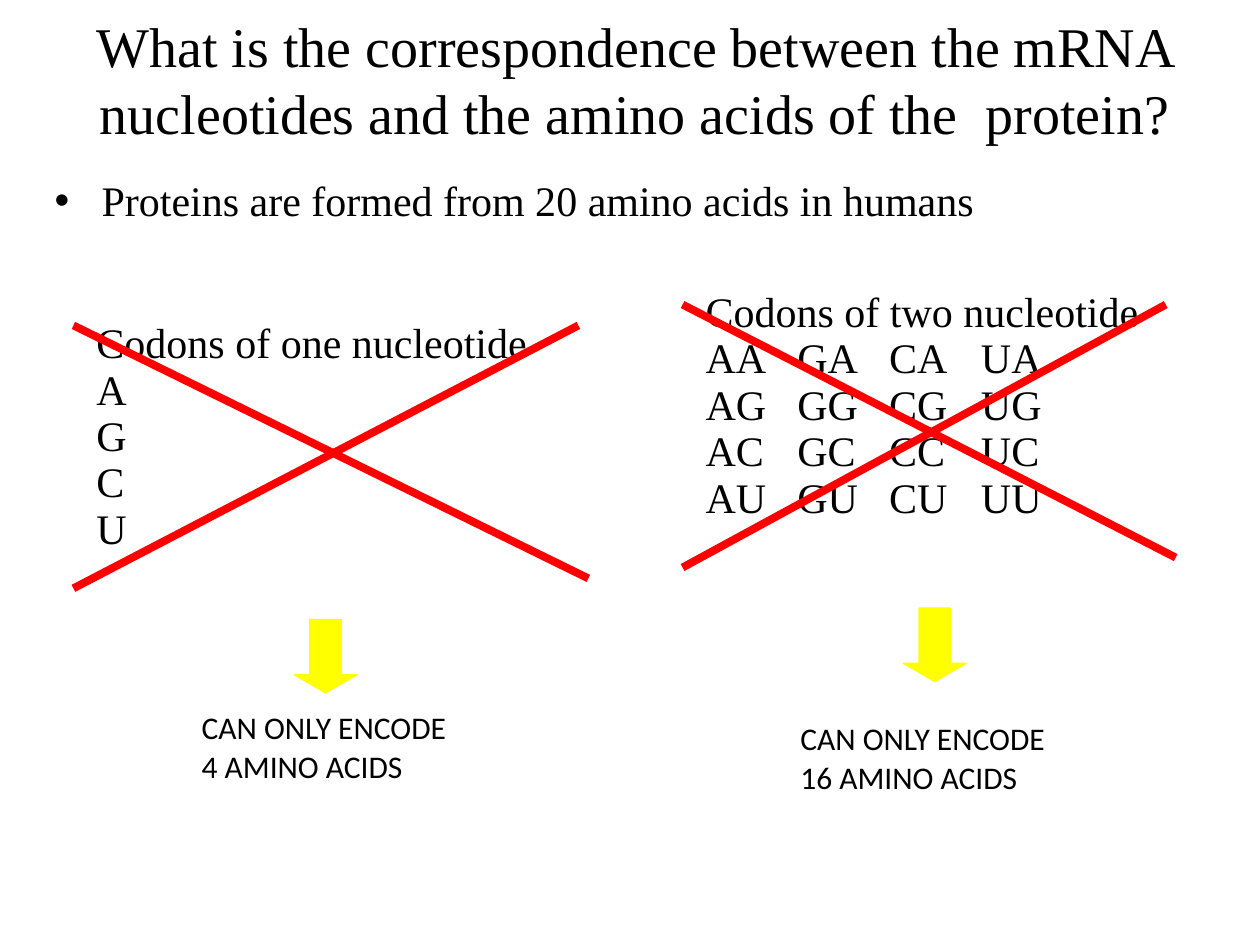
import pptx
import pptx.dml.color
import pptx.enum.shapes
import pptx.enum.text
import pptx.oxml.ns
import pptx.util
from lxml import etree

Cm = pptx.util.Cm
SERIF = "Times New Roman"


def color(value):
    return pptx.dml.color.RGBColor.from_string(value)


def add_run(p, text, size, font=SERIF):
    r = p.add_run()
    r.text = text
    r.font.size = pptx.util.Pt(size)
    r.font.name = font
    r.font.color.rgb = color("000000")


def add_child(parent, tag, **attrs):
    return etree.SubElement(parent, pptx.oxml.ns.qn(tag), **attrs)


def text_box(s, box):
    tf = s.shapes.add_textbox(*map(Cm, box)).text_frame
    tf.word_wrap = True
    return tf


def title(s, box):
    tf = text_box(s, box)
    tf.vertical_anchor = pptx.enum.text.MSO_ANCHOR.MIDDLE
    p = tf.paragraphs[0]
    p.alignment = pptx.enum.text.PP_ALIGN.CENTER
    add_run(p, "What is the correspondence between the mRNA nucleotides "
               "and the amino acids of the  protein?", 32)


def body(s, box):
    p = text_box(s, box).paragraphs[0]
    pPr = p._p.get_or_add_pPr()
    pPr.set("marL", str(Cm(0.95)))
    pPr.set("indent", str(Cm(-0.95)))
    add_child(pPr, "a:buFont", typeface="Arial")
    add_child(pPr, "a:buChar", char="•")
    add_run(p, "Proteins are formed from 20 amino acids in humans", 24)


def cell_table(s, box, lines, size, font=SERIF):
    tbl = s.shapes.add_table(1, 1, *map(Cm, box)).table
    tbl.first_row = tbl.horz_banding = False
    cell = tbl.cell(0, 0)
    cell.fill.background()
    tf = cell.text_frame
    for i, line in enumerate(lines):
        p = tf.add_paragraph() if i else tf.paragraphs[0]
        if "\t" in line:
            tabs = add_child(p._p.get_or_add_pPr(), "a:tabLst")
            for n in range(1, 4):
                add_child(tabs, "a:tab", pos=str(Cm(1.85 * n)), algn="l")
        add_run(p, line, size, font)


def cross(s, box):
    x, y, w, h = box
    grp = s.shapes.add_group_shape()
    straight = pptx.enum.shapes.MSO_CONNECTOR.STRAIGHT
    for ends in ((x, y, x + w, y + h - 0.2), (x + w - 0.2, y, x, y + h)):
        ln = grp.shapes.add_connector(straight, *map(Cm, ends))
        ln.line.color.rgb = color("FF0000")
        ln.line.width = pptx.util.Pt(4.5)
        add_child(ln._element.spPr, "a:effectLst")


def arrow(s, box):
    sp = s.shapes.add_shape(pptx.enum.shapes.MSO_SHAPE.DOWN_ARROW, *map(Cm, box))
    sp.adjustments[1] = 0.29
    sp.shadow.inherit = False
    sp.fill.solid()
    sp.fill.fore_color.rgb = color("FFFF00")
    sp.line.color.rgb = color("FFFF00")
    sp.line.width = pptx.util.Pt(0.75)


def panel(s, box, codons, codon_box, arrow_top, verdict, verdict_box):
    x, y = box[:2]

    def place(dx, dy, w, h):
        return x + dx, y + dy, w, h

    cell_table(s, place(*codon_box), codons, 24)
    cross(s, box)
    arrow(s, place(4.45, arrow_top, 1.27, 1.48))
    cell_table(s, place(*verdict_box), [verdict], 18, "Calibri")


def main():
    prs = pptx.Presentation()
    prs.slide_width, prs.slide_height = Cm(25.4), Cm(19.05)
    s = prs.slides.add_slide(prs.slide_layouts[6])
    title(s, (0.85, 0, 23.92, 3.18))
    body(s, (0.85, 3.39, 23.92, 14.82))
    bases = "AGCU"
    panel(s, (1.48, 6.56, 10.38, 5.3),
          ["Codons of one nucleotide", *bases], (0.21, -0.21, 9.53, 5.72),
          5.93, "CAN ONLY ENCODE 4 AMINO ACIDS", (2.33, 7.62, 5.72, 1.7))
    pairs = ["\t".join(first + second for first in "AGCU") for second in bases]
    panel(s, (13.76, 6.14, 9.94, 5.3),
          ["Codons of two nucleotide", *pairs], (0.21, -0.42, 10.37, 6.14),
          6.12, "CAN ONLY ENCODE 16 AMINO ACIDS", (2.12, 8.26, 6.14, 2.12))
    prs.save("out.pptx")


if __name__ == "__main__":
    main()
